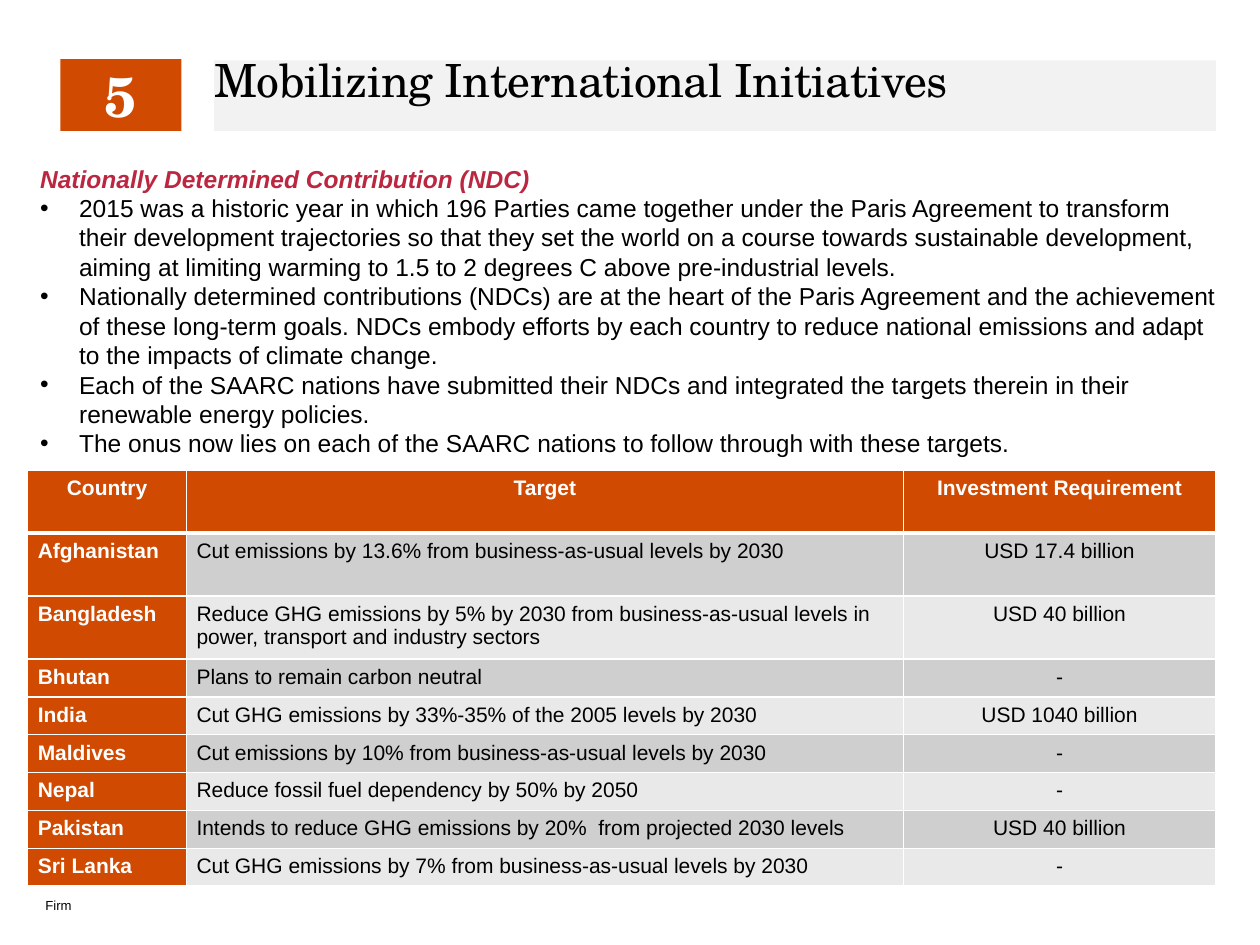
"""Build the slide on international initiatives and NDC targets."""
from lxml import etree
from pptx import Presentation
from pptx.dml.color import RGBColor
from pptx.enum import shapes, text
from pptx.oxml import ns
from pptx.util import Inches, Pt

ORANGE = RGBColor(0xD0, 0x4A, 0x02)
CRIMSON = RGBColor(0xBB, 0x27, 0x40)
PALE = RGBColor(0xF2, 0xF2, 0xF2)
BANDS = [RGBColor(0xCF, 0xCF, 0xCF), RGBColor(0xE9, 0xE9, 0xE9)]
WHITE = RGBColor(0xFF, 0xFF, 0xFF)
BLACK = RGBColor(0, 0, 0)
SANS, SERIF = "Arial", "TeX Gyre Schola"
LEFT, CENTER = text.PP_ALIGN.LEFT, text.PP_ALIGN.CENTER
TOP, MIDDLE, BOTTOM = text.MSO_ANCHOR.TOP, text.MSO_ANCHOR.MIDDLE, text.MSO_ANCHOR.BOTTOM

TITLE = "Mobilizing International Initiatives"
NUMBER = "5"
FOOTER = "Firm"
HEADING = "Nationally Determined Contribution (NDC)"
BULLETS = [
    "2015 was a historic year in which 196 Parties came together under the Paris Agreement "
    "to transform their development trajectories so that they set the world on a course "
    "towards sustainable development, aiming at limiting warming to 1.5 to 2 degrees C "
    "above pre-industrial levels.",
    "Nationally determined contributions (NDCs) are at the heart of the Paris Agreement and "
    "the achievement of these long-term goals. NDCs embody efforts by each country to reduce "
    "national emissions and adapt to the impacts of climate change.",
    "Each of the SAARC nations have submitted their NDCs and integrated the targets therein "
    "in their renewable energy policies.",
    "The onus now lies on each of the SAARC nations to follow through with these targets.",
]
ROWS = [
    ("Country", "Target", "Investment Requirement"),
    ("Afghanistan", "Cut emissions by 13.6% from business-as-usual levels by 2030", "USD 17.4 billion"),
    ("Bangladesh", "Reduce GHG emissions by 5% by 2030 from business-as-usual levels in power, "
     "transport and industry sectors", "USD 40 billion"),
    ("Bhutan", "Plans to remain carbon neutral", "-"),
    ("India", "Cut GHG emissions by 33%-35% of the 2005 levels by 2030", "USD 1040 billion"),
    ("Maldives", "Cut emissions by 10% from business-as-usual levels by 2030", "-"),
    ("Nepal", "Reduce fossil fuel dependency by 50% by 2050", "-"),
    ("Pakistan", "Intends to reduce GHG emissions by 20%  from projected 2030 levels", "USD 40 billion"),
    ("Sri Lanka", "Cut GHG emissions by 7% from business-as-usual levels by 2030", "-"),
]
COLUMN_WIDTHS = [1.26, 5.69, 2.48]
ROW_HEIGHTS = [0.5] * 3 + [0.3] * 6


def style(para, font, size, color, bold=False, italic=False, align=LEFT):
    para.alignment = align
    for span in para.runs:
        span.font.name, span.font.size = font, Pt(size)
        span.font.bold, span.font.italic = bold, italic
        span.font.color.rgb = color


def set_frame(frame, anchor, inset=None):
    frame.word_wrap = True
    frame.vertical_anchor = anchor
    if inset is not None:
        frame.margin_left = frame.margin_right = Inches(inset)
        frame.margin_top = frame.margin_bottom = Inches(inset)


def add_box(page, place, words, anchor, fill=None, inset=None):
    place = [Inches(length) for length in place]
    if fill is None:
        box = page.shapes.add_textbox(*place)
    else:
        box = page.shapes.add_shape(shapes.MSO_SHAPE.RECTANGLE, *place)
        box.shadow.inherit = False
        box.fill.solid()
        box.fill.fore_color.rgb = fill
        box.line.fill.background()
    set_frame(box.text_frame, anchor, inset)
    box.text_frame.text = words
    return box.text_frame.paragraphs


def add_bullet(para):
    props = para._p.get_or_add_pPr()
    props.set("marL", str(Inches(0.31)))
    props.set("indent", str(-Inches(0.31)))
    etree.SubElement(props, ns.qn("a:buFont"), typeface=SANS)
    etree.SubElement(props, ns.qn("a:buChar"), char="•")


def add_borders(cell, is_header):
    props = cell._tc.get_or_add_tcPr()
    for index, side in enumerate(("lnL", "lnR", "lnT", "lnB")):
        heavy = is_header and side == "lnB"
        line = etree.Element(ns.qn("a:" + side), w=str(Pt(3 if heavy else 1)))
        fill = etree.SubElement(line, ns.qn("a:solidFill"))
        etree.SubElement(fill, ns.qn("a:srgbClr"), val=str(WHITE))
        props.insert(index, line)


def add_targets(page):
    table = page.shapes.add_table(
        len(ROWS), len(COLUMN_WIDTHS), Inches(0.22), Inches(3.73),
        Inches(sum(COLUMN_WIDTHS)), Inches(sum(ROW_HEIGHTS))).table
    for column, width in zip(table.columns, COLUMN_WIDTHS):
        column.width = Inches(width)
    for r, (row, height) in enumerate(zip(ROWS, ROW_HEIGHTS)):
        table.rows[r].height = Inches(height)
        for c, words in enumerate(row):
            cell = table.cell(r, c)
            strong = r == 0 or c == 0
            cell.text_frame.text = words
            cell.margin_left = cell.margin_right = Inches(0.08)
            cell.fill.solid()
            cell.fill.fore_color.rgb = ORANGE if strong else BANDS[(r - 1) % 2]
            style(cell.text_frame.paragraphs[0], SANS, 12, WHITE if strong else BLACK,
                  bold=strong, align=CENTER if r == 0 or c == 2 else LEFT)
            add_borders(cell, r == 0)


def main():
    deck = Presentation()
    deck.slide_width, deck.slide_height = Inches(10), Inches(7.5)
    page = deck.slides.add_slide(deck.slide_layouts[6])

    footer, = add_box(page, (0.36, 7.1, 4.49, 0.15), FOOTER, BOTTOM, inset=0)
    style(footer, SANS, 7.5, BLACK)

    title, = add_box(page, (1.7, 0.48, 7.95, 0.56), TITLE, TOP, PALE, 0)
    style(title, SERIF, 26.1, BLACK)
    title.line_spacing = 0.85
    title.runs[0].font._element.set("spc", "-30")

    number, = add_box(page, (0.48, 0.47, 0.96, 0.57), NUMBER, MIDDLE, ORANGE)
    style(number, SERIF, 32, WHITE, bold=True, align=CENTER)

    heading, *bullets = add_box(page, (0.22, 1.25, 9.56, 2.93),
                                "\n".join([HEADING] + BULLETS), TOP)
    style(heading, SANS, 14, CRIMSON, bold=True, italic=True)
    for para in bullets:
        style(para, SANS, 14, BLACK)
        add_bullet(para)

    add_targets(page)
    deck.save("out.pptx")


if __name__ == "__main__":
    main()
